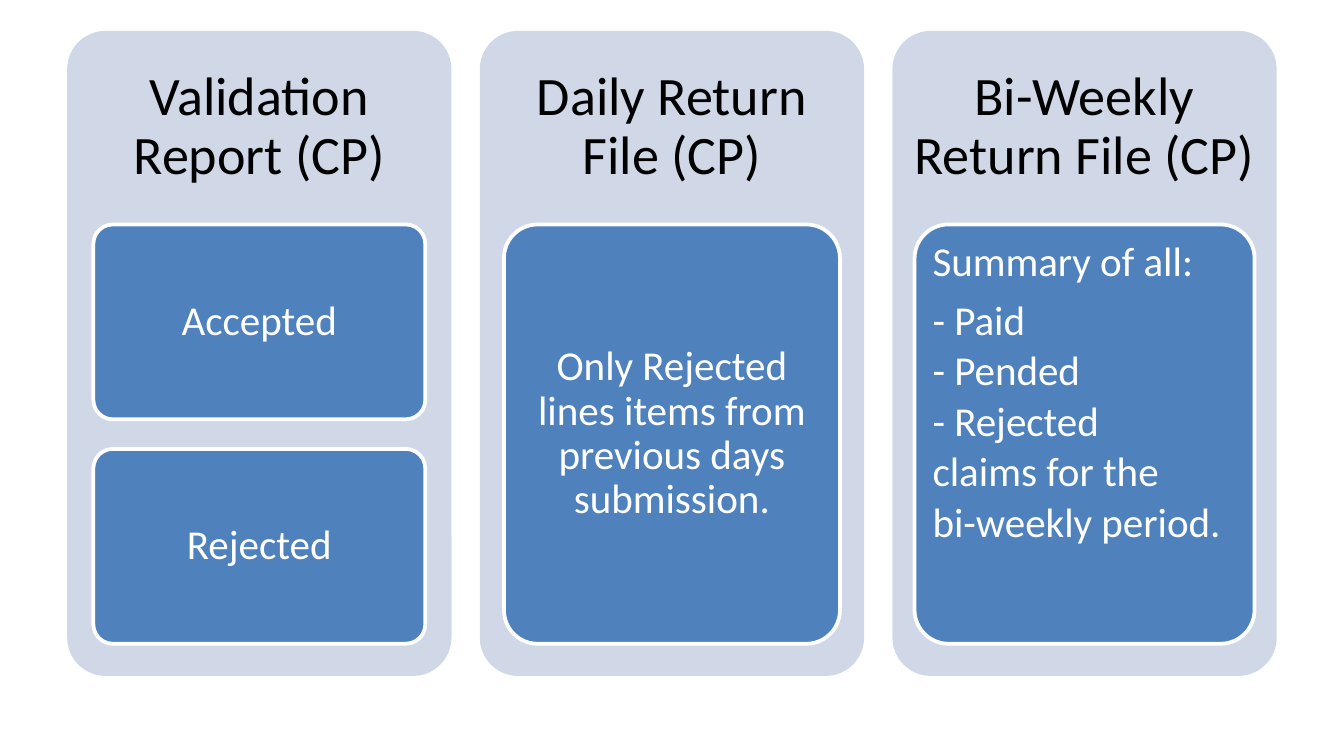
from dataclasses import dataclass

from pptx import Presentation
from pptx.dml.color import RGBColor
from pptx.enum.shapes import MSO_SHAPE
from pptx.enum.text import MSO_ANCHOR, PP_ALIGN
from pptx.util import Inches, Pt


@dataclass(frozen=True)
class Theme:
    font: str = "Calibri"
    panel: RGBColor = RGBColor(0xD0, 0xD8, 0xE8)
    card: RGBColor = RGBColor(0x4F, 0x81, 0xBD)
    light: RGBColor = RGBColor(0xFF, 0xFF, 0xFF)
    dark: RGBColor = RGBColor(0x00, 0x00, 0x00)
    heading_size: int = 29
    body_size: int = 22


THEME = Theme()
SLIDE_W = 10
SLIDE_H = SLIDE_W * 9 / 16
PANEL_TOP, PANEL_W, PANEL_H = 0.23, 2.86, 4.8
PANEL_LEFT, PANEL_STEP = 0.5, 3.07
HEADING_H, CARDS_H, CARD_GAP = 1.44, 3.12, 0.22

SUMMARY = ["Summary of all:", "- Paid", "- Pended", "- Rejected",
           "claims for the", "bi-weekly period."]
# Heading, card width, and the lines of each card
COLUMNS = [
    ("Validation Report (CP)", 2.47, [["Accepted"], ["Rejected"]]),
    ("Daily Return File (CP)", 2.5,
     [["Only Rejected lines items from previous days submission."]]),
    ("Bi-Weekly Return File (CP)", 2.53, [SUMMARY]),
]


def set_text(sp, lines, size, color, margins, anchor=MSO_ANCHOR.MIDDLE,
             align=PP_ALIGN.CENTER):
    """Fill a shape with one paragraph per line; the first is a lead line."""
    tf = sp.text_frame
    side, edge = (Inches(m) for m in margins)
    frame_format = {"word_wrap": True, "vertical_anchor": anchor,
                    "margin_left": side, "margin_right": side,
                    "margin_top": edge, "margin_bottom": edge}
    for name, value in frame_format.items():
        setattr(tf, name, value)
    for i, line in enumerate(lines):
        p = tf.paragraphs[0] if i == 0 else tf.add_paragraph()
        space = 0.15 if i else 0.35
        paragraph_format = {"alignment": align, "line_spacing": 0.9,
                            "space_after": Pt(round(space * size, 1))}
        for name, value in paragraph_format.items():
            setattr(p, name, value)
        r = p.add_run()
        r.text = line
        for name, value in {"name": THEME.font, "size": Pt(size)}.items():
            setattr(r.font, name, value)
        r.font.color.rgb = color


def add_round_box(s, box, fill, line=None):
    sp = s.shapes.add_shape(MSO_SHAPE.ROUNDED_RECTANGLE, *map(Inches, box))
    sp.adjustments[0] = 0.1
    sp.shadow.inherit = False
    sp.fill.solid()
    sp.fill.fore_color.rgb = fill
    if line is None:
        sp.line.fill.background()
    else:
        sp.line.color.rgb = line
        sp.line.width = Pt(2)
    return sp


def add_card(s, box, lines):
    sp = add_round_box(s, box, THEME.card, THEME.light)
    placing = {}
    if len(lines) > 1:
        placing = {"anchor": MSO_ANCHOR.TOP, "align": PP_ALIGN.LEFT}
    set_text(sp, lines, THEME.body_size, THEME.light, (0.06, 0.05), **placing)


def add_column(s, box, heading, card_w, cards):
    """Draw a panel with its heading and equal cards stacked below."""
    x, y, w, h = box
    add_round_box(s, box, THEME.panel)
    title = s.shapes.add_textbox(*map(Inches, (x, y, w, HEADING_H)))
    set_text(title, [heading], THEME.heading_size, THEME.dark, (0.12, 0.12))
    card_h = (CARDS_H - CARD_GAP * (len(cards) - 1)) / len(cards)
    for i, lines in enumerate(cards):
        top = y + HEADING_H + i * (card_h + CARD_GAP)
        add_card(s, (x + (w - card_w) / 2, top, card_w, card_h), lines)


def main():
    prs = Presentation()
    prs.slide_width, prs.slide_height = Inches(SLIDE_W), Inches(SLIDE_H)
    s = prs.slides.add_slide(prs.slide_layouts[6])
    for i, column in enumerate(COLUMNS):
        box = (PANEL_LEFT + i * PANEL_STEP, PANEL_TOP, PANEL_W, PANEL_H)
        add_column(s, box, *column)
    prs.save("out.pptx")


if __name__ == "__main__":
    main()
